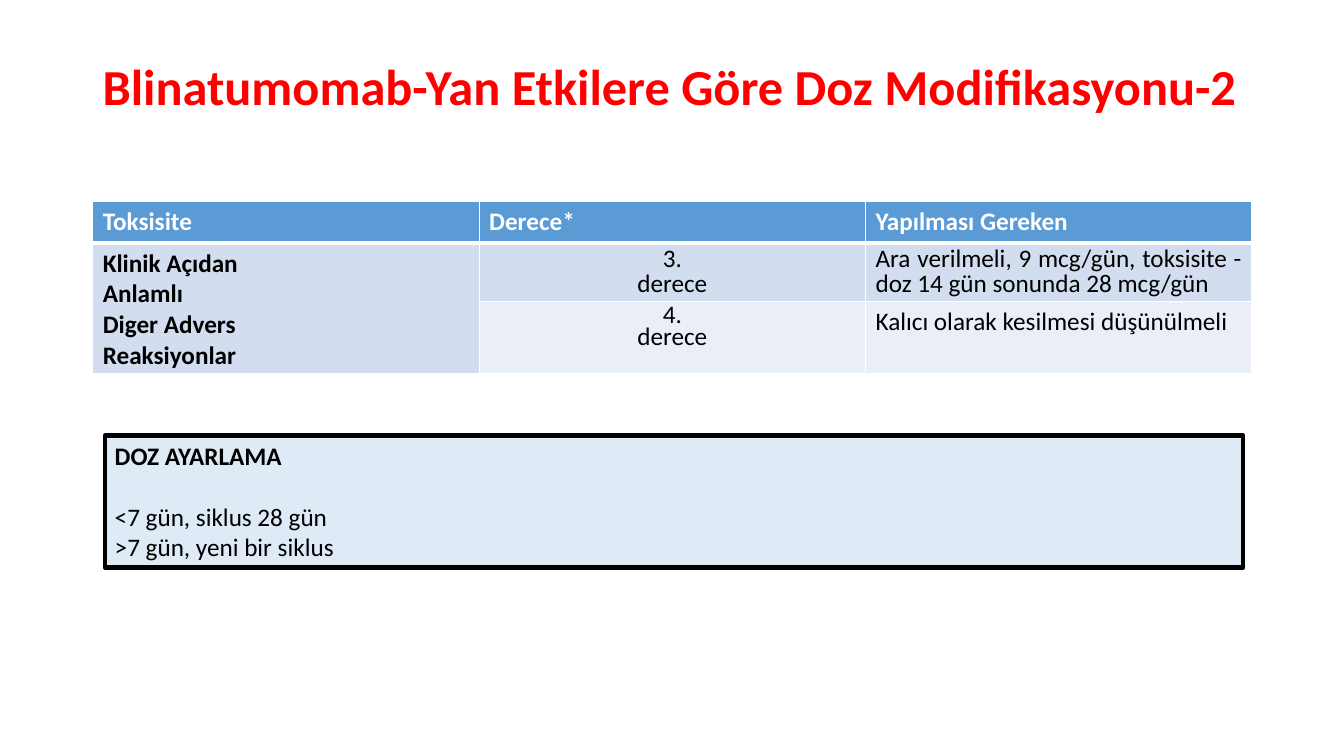
"""Build the blinatumomab dose modification slide."""
import dataclasses
import typing

import lxml.etree
import pptx
import pptx.dml.color
import pptx.enum.shapes
import pptx.enum.text
import pptx.oxml.ns
import pptx.util

ALIGN = pptx.enum.text.PP_ALIGN
ANCHOR = pptx.enum.text.MSO_ANCHOR


@dataclasses.dataclass(frozen=True)
class Theme:
    """Hold the colours and type sizes of the slide."""
    font: str = "Calibri"
    title_size: int = 36
    body_size: int = 18
    title: str = "FF0000"
    ink: str = "000000"
    paper: str = "FFFFFF"
    header: str = "5B9BD5"
    band_dark: str = "D2DEEF"
    band_light: str = "EAEFF7"
    note: str = "DEEBF7"


@dataclasses.dataclass(frozen=True)
class Area:
    """Give a rectangle in percent of the slide's width and height."""
    left: float
    top: float
    width: float
    height: float


@dataclasses.dataclass(frozen=True)
class Line:
    """Describe one paragraph of text."""
    text: str
    bold: bool = False
    color: str = Theme.ink
    size: int = Theme.body_size
    layout: dict[str, typing.Any] = dataclasses.field(default_factory=dict)


@dataclasses.dataclass(frozen=True)
class Entry:
    """Describe one table cell and the rows it spans."""
    row: int
    column: int
    fill: str
    lines: list[Line]
    row_span: int = 1


THEME = Theme()
WIDTH, HEIGHT = pptx.util.Inches(13.33), pptx.util.Inches(7.5)
TITLE_AREA = Area(6.9, 5.33, 86.25, 13.07)
TABLE_AREA = Area(6.9, 26.67, 86.25, 22.8)
NOTE_AREA = Area(7.8, 57.6, 84.7, 17.47)
ROW_SHARES = (0.24, 0.34, 0.42)
COLUMNS = 3
THIN, THICK = 1, 3

TITLE = Line("Blinatumomab-Yan Etkilere Göre Doz Modifikasyonu-2", True,
             THEME.title, THEME.title_size, {"line_spacing": 0.9})
HEADINGS = ("Toksisite", "Derece*", "Yapılması Gereken")
TOXICITY = ("Klinik Açıdan", "Anlamlı", "Diger Advers", "Reaksiyonlar")
NOTE = [
    Line("DOZ AYARLAMA", True, layout={"space_after": pptx.util.Pt(22)}),
    Line("<7 gün, siklus 28 gün"),
    Line(">7 gün, yeni bir siklus"),
]


def grade(number: str, spacing: float) -> list[Line]:
    """Return the two centred lines that name a grade."""
    layout = {"alignment": ALIGN.CENTER, "line_spacing": spacing}
    return [Line(text, layout=layout) for text in (number, "derece")]


ENTRIES = [
    *(Entry(0, column, THEME.header, [Line(text, True, THEME.paper)])
      for column, text in enumerate(HEADINGS)),
    Entry(1, 0, THEME.band_dark, [Line(text, True) for text in TOXICITY], 2),
    Entry(1, 1, THEME.band_dark, grade("3.", 0.8)),
    Entry(1, 2, THEME.band_dark, [
        Line("Ara verilmeli, 9 mcg/gün, toksisite - doz 14 gün sonunda 28 mcg/gün",
             layout={"alignment": ALIGN.JUSTIFY, "line_spacing": 0.8})]),
    Entry(2, 1, THEME.band_light, grade("4.", 0.7)),
    Entry(2, 2, THEME.band_light, [Line("Kalıcı olarak kesilmesi düşünülmeli")]),
]


def rgb(value: str) -> pptx.dml.color.RGBColor:
    """Return a colour object for a hex value."""
    return pptx.dml.color.RGBColor.from_string(value)


def apply(target: typing.Any, values: dict[str, typing.Any]) -> None:
    """Set each format value on the target."""
    for name, value in values.items():
        setattr(target, name, value)


def place(area: Area) -> tuple[int, int, int, int]:
    """Turn percentages into slide lengths."""
    return (int(WIDTH * area.left / 100), int(HEIGHT * area.top / 100),
            int(WIDTH * area.width / 100), int(HEIGHT * area.height / 100))


def paint(target: typing.Any, color: str) -> None:
    """Give a shape or cell a solid fill."""
    target.fill.solid()
    target.fill.fore_color.rgb = rgb(color)


def write(frame: typing.Any, lines: list[Line]) -> None:
    """Write the lines as paragraphs of a text frame."""
    for index, line in enumerate(lines):
        para = frame.add_paragraph() if index else frame.paragraphs[0]
        apply(para, {"alignment": ALIGN.LEFT, **line.layout})
        span = para.add_run()
        span.text = line.text
        apply(span.font, {"name": THEME.font, "bold": line.bold,
                          "size": pptx.util.Pt(line.size)})
        span.font.color.rgb = rgb(line.color)


def add_borders(cell: typing.Any, row: int) -> None:
    """Draw white cell borders, thick below the header row."""
    weights = {"lnL": THIN, "lnR": THIN, "lnT": THICK if row == 1 else THIN,
               "lnB": THICK if row == 0 else THIN}
    qualify = pptx.oxml.ns.qn
    properties = cell._tc.get_or_add_tcPr()
    for position, (edge, weight) in enumerate(weights.items()):
        border = lxml.etree.Element(qualify(f"a:{edge}"), w=str(pptx.util.Pt(weight)))
        fill = lxml.etree.SubElement(border, qualify("a:solidFill"))
        lxml.etree.SubElement(fill, qualify("a:srgbClr"), val=THEME.paper)
        properties.insert(position, border)


def add_title(page: typing.Any) -> None:
    """Add the title line."""
    box = page.shapes.add_textbox(*place(TITLE_AREA))
    apply(box.text_frame, {"word_wrap": True, "vertical_anchor": ANCHOR.MIDDLE})
    write(box.text_frame, [TITLE])


def add_dose_table(page: typing.Any) -> None:
    """Add the toxicity table."""
    frame = page.shapes.add_table(len(ROW_SHARES), COLUMNS, *place(TABLE_AREA))
    table = frame.table
    total = frame.height
    for row, share in zip(table.rows, ROW_SHARES):
        row.height = int(total * share)
    for entry in ENTRIES:
        cell = table.cell(entry.row, entry.column)
        if entry.row_span > 1:
            cell.merge(table.cell(entry.row + entry.row_span - 1, entry.column))
        paint(cell, entry.fill)
        add_borders(cell, entry.row)
        write(cell.text_frame, entry.lines)


def add_note(page: typing.Any) -> None:
    """Add the framed dose adjustment note."""
    box = page.shapes.add_shape(pptx.enum.shapes.MSO_SHAPE.RECTANGLE, *place(NOTE_AREA))
    box.shadow.inherit = False
    paint(box, THEME.note)
    box.line.color.rgb = rgb(THEME.ink)
    box.line.width = pptx.util.Pt(THICK)
    apply(box.text_frame, {"word_wrap": True, "vertical_anchor": ANCHOR.TOP})
    write(box.text_frame, NOTE)


def main() -> None:
    """Build and save the deck."""
    deck = pptx.Presentation()
    apply(deck, {"slide_width": WIDTH, "slide_height": HEIGHT})
    page = deck.slides.add_slide(deck.slide_layouts[6])
    add_title(page)
    add_dose_table(page)
    add_note(page)
    deck.save("out.pptx")


if __name__ == "__main__":
    main()
